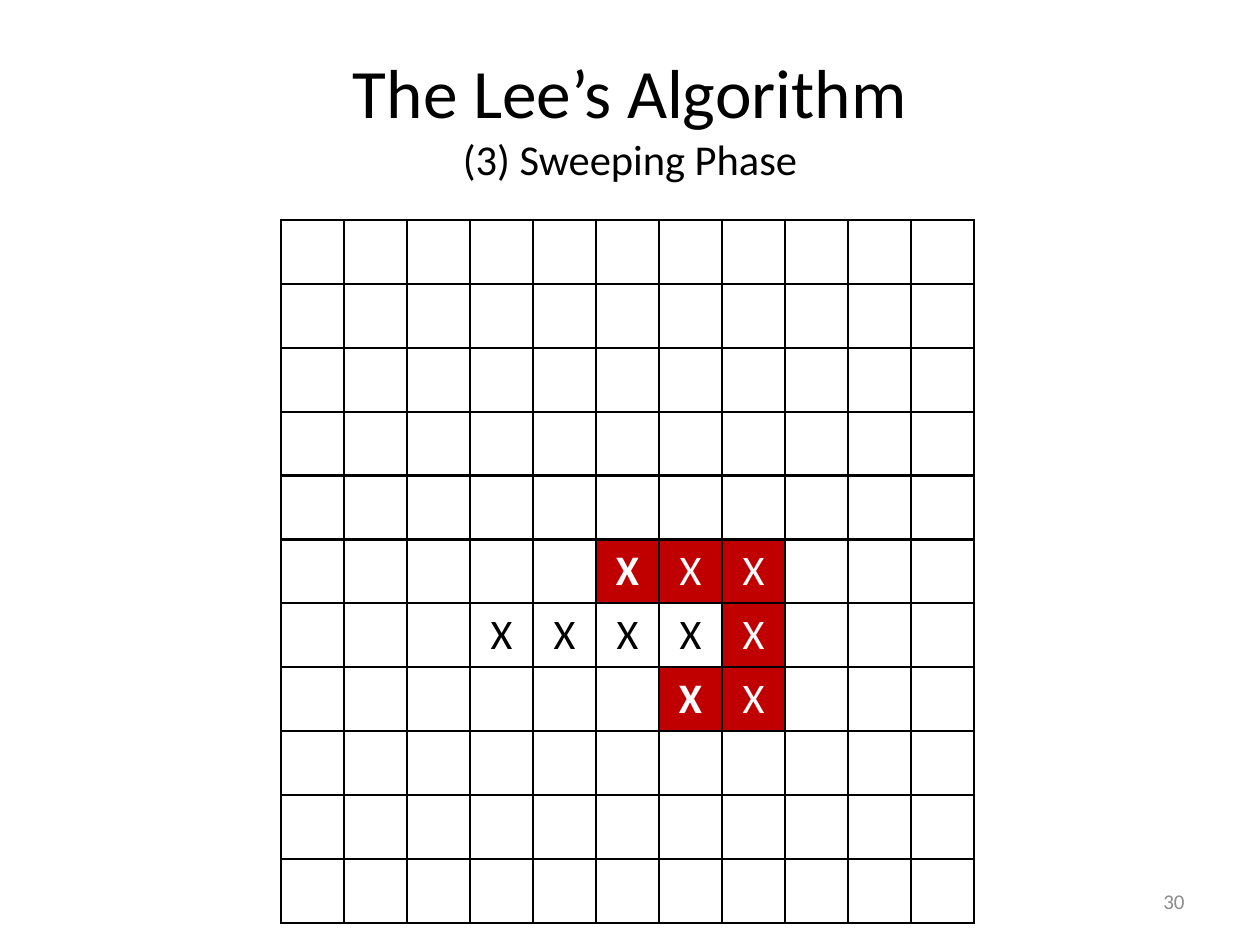
from dataclasses import dataclass

from lxml import etree
from pptx import Presentation
from pptx.dml.color import RGBColor
from pptx.enum.text import MSO_ANCHOR, MSO_AUTO_SIZE, PP_ALIGN
from pptx.oxml.ns import qn
from pptx.util import Pt

EMU_PER_PX = 914400 / 126
TITLE_ONLY_LAYOUT = 5
CENTER, RIGHT = PP_ALIGN.CENTER, PP_ALIGN.RIGHT
MIDDLE = MSO_ANCHOR.MIDDLE
NO_AUTOFIT = MSO_AUTO_SIZE.NONE

FONT = "Calibri"
BLACK, WHITE, RED, GRAY = "000000", "FFFFFF", "C00000", "8C8C8C"
GRID_SIZE = 11
CELL_PX = 63
CELL_POINTS = 24
BORDER_POINTS = 1.5


@dataclass(frozen=True)
class Box:
    left: int
    top: int
    width: int
    height: int


@dataclass(frozen=True)
class Mark:
    """A grid cell holding an X; cells on the routed path are filled."""
    row: int
    column: int
    on_path: bool = True
    terminal: bool = False


MARKS = [
    Mark(5, 5, terminal=True), Mark(5, 6), Mark(5, 7),
    *(Mark(6, column, on_path=False) for column in range(3, 7)),
    Mark(6, 7),
    Mark(7, 6, terminal=True), Mark(7, 7),
]


def px(length: int) -> int:
    return round(length * EMU_PER_PX)


def color(value: str) -> RGBColor:
    return RGBColor.from_string(value)


def place(shape, box: Box) -> None:
    shape.left, shape.top = px(box.left), px(box.top)
    shape.width, shape.height = px(box.width), px(box.height)


def add_run(paragraph, text: str, points: float, hex_color: str, bold: bool = False) -> None:
    run = paragraph.add_run()
    run.text = text
    run.font.name = FONT
    run.font.size = Pt(points)
    run.font.bold = bold
    run.font.color.rgb = color(hex_color)


def format_title(shape) -> None:
    place(shape, Box(63, 38, 1134, 157))
    frame = shape.text_frame
    frame.auto_size = NO_AUTOFIT
    frame.vertical_anchor = MIDDLE
    paragraph = frame.paragraphs[0]
    paragraph.alignment = CENTER
    add_run(paragraph, "The Lee’s Algorithm", 39.6, BLACK)
    paragraph.add_line_break()
    add_run(paragraph, "(3) Sweeping Phase", 24.3, BLACK)


def set_borders(cell) -> None:
    properties = cell._tc.get_or_add_tcPr()
    for index, side in enumerate(("a:lnL", "a:lnR", "a:lnT", "a:lnB")):
        line = etree.Element(qn(side), w=str(Pt(BORDER_POINTS)))
        fill = etree.SubElement(line, qn("a:solidFill"))
        etree.SubElement(fill, qn("a:srgbClr"), val=BLACK)
        properties.insert(index, line)


def format_empty_cell(cell) -> None:
    """Keep the empty line as tall as a marked one, so all rows match."""
    cell.fill.background()
    paragraph = cell.text_frame.paragraphs[0]
    etree.SubElement(paragraph._p, qn("a:endParaRPr"), sz=str(CELL_POINTS * 100))


def format_marked_cell(cell, mark: Mark) -> None:
    if mark.on_path:
        cell.fill.solid()
        cell.fill.fore_color.rgb = color(RED)
    else:
        cell.fill.background()
    paragraph = cell.text_frame.paragraphs[0]
    paragraph.alignment = CENTER
    add_run(paragraph, "X", CELL_POINTS, WHITE if mark.on_path else BLACK, mark.terminal)


def add_routing_grid(slide, left: int, top: int) -> None:
    side = px(GRID_SIZE * CELL_PX)
    table = slide.shapes.add_table(GRID_SIZE, GRID_SIZE, px(left), px(top), side, side).table
    table.first_row = False
    table.horz_banding = False
    for column in table.columns:
        column.width = px(CELL_PX)
    for row in table.rows:
        row.height = px(CELL_PX)
    marks = {(mark.row, mark.column): mark for mark in MARKS}
    for row in range(GRID_SIZE):
        for column in range(GRID_SIZE):
            cell = table.cell(row, column)
            cell.vertical_anchor = MIDDLE
            mark = marks.get((row, column))
            if mark:
                format_marked_cell(cell, mark)
            else:
                format_empty_cell(cell)
            set_borders(cell)


def add_slide_number(slide, number: str) -> None:
    shape = slide.shapes.add_textbox(0, 0, 0, 0)
    place(shape, Box(903, 876, 294, 50))
    frame = shape.text_frame
    frame.word_wrap = True
    frame.vertical_anchor = MIDDLE
    paragraph = frame.paragraphs[0]
    paragraph.alignment = RIGHT
    add_run(paragraph, number, 12, GRAY)


def main() -> None:
    presentation = Presentation()
    presentation.slide_width, presentation.slide_height = px(1260), px(945)
    slide = presentation.slides.add_slide(presentation.slide_layouts[TITLE_ONLY_LAYOUT])
    format_title(slide.shapes.title)
    add_routing_grid(slide, 281, 220)
    add_slide_number(slide, "30")
    presentation.save("out.pptx")


if __name__ == "__main__":
    main()
